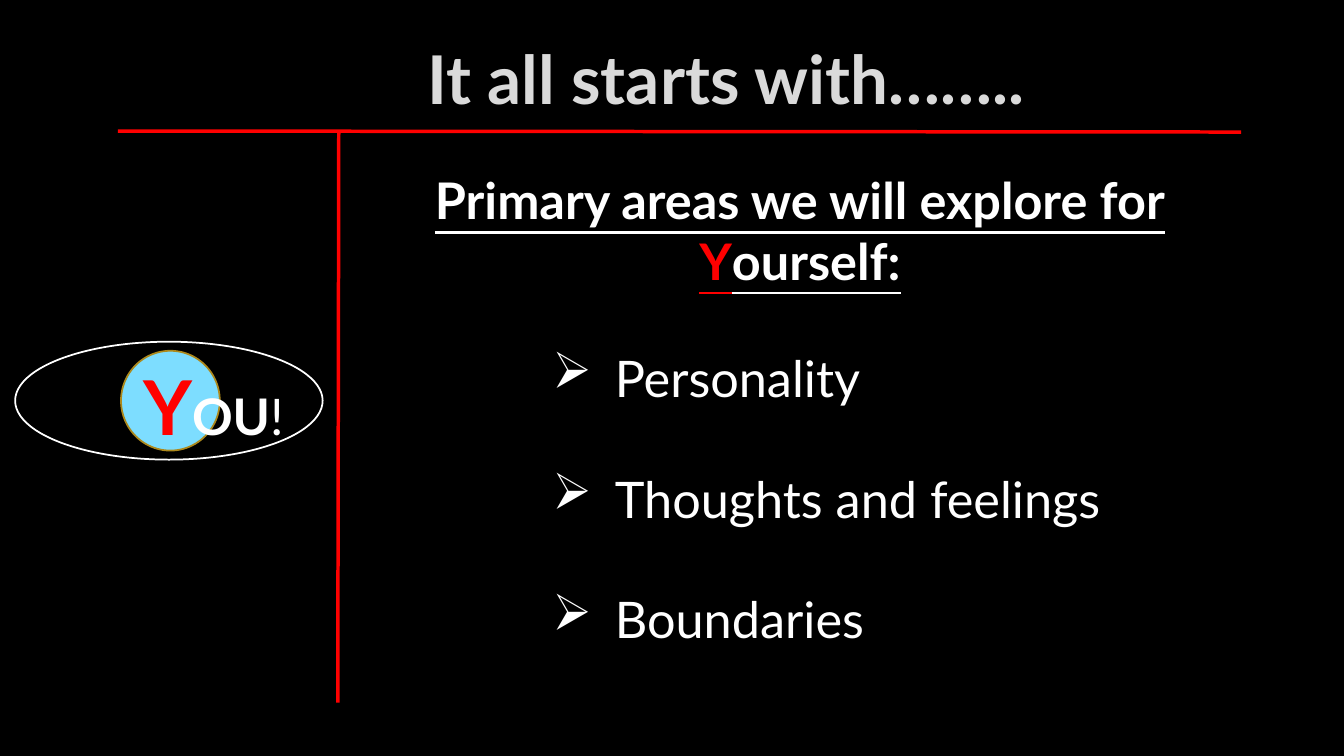
from dataclasses import dataclass

from lxml.etree import SubElement
from pptx import Presentation
from pptx.dml.color import RGBColor as Color
from pptx.enum.shapes import MSO_CONNECTOR as Connector, MSO_SHAPE as Preset
from pptx.enum.text import PP_ALIGN as Align
from pptx.oxml.ns import qn
from pptx.util import Inches, Pt


@dataclass(frozen=True)
class Theme:
    font: str = "Lato"
    black: Color = Color(0, 0, 0)
    white: Color = Color(255, 255, 255)
    silver: Color = Color(0xDA, 0xDA, 0xDA)
    red: Color = Color(255, 0, 0)
    sky: Color = Color(0x7D, 0xDD, 0xFF)
    gold: Color = Color(0xAC, 0x88, 0x1C)
    body: int = 36
    title: int = 48
    initial: int = 54
    bullet_gap: float = 43.2
    rule: float = 2.5
    outline: float = 1.25


THEME = Theme()


@dataclass(frozen=True)
class Area:
    left: float
    top: float
    width: float
    height: float

    def lengths(self) -> list:
        return [Inches(n) for n in (self.left, self.top, self.width, self.height)]


@dataclass(frozen=True)
class Span:
    text: str
    color: Color = THEME.white
    size: int = THEME.body
    bold: bool = False
    underline: bool = False


@dataclass(frozen=True)
class TextBlock:
    area: Area
    lines: list[list[Span]]
    align: Align = Align.LEFT
    bullet: str = ""
    gap: float = 0


@dataclass(frozen=True)
class Oval:
    preset: Preset
    area: Area
    fill: Color
    line: Color


@dataclass(frozen=True)
class Rule:
    start: tuple[float, float]
    end: tuple[float, float]


RULES = [Rule((1.17, 1.3), (12.31, 1.31)), Rule((3.36, 1.3), (3.35, 6.97))]

OVALS = [
    Oval(Preset.OVAL, Area(0.15, 3.39, 3.05, 1.17), THEME.black, THEME.white),
    Oval(Preset.FLOWCHART_CONNECTOR, Area(1.2, 3.48, 0.98, 0.99), THEME.sky, THEME.gold),
]

TEXTS = [
    TextBlock(
        Area(3.22, 0.32, 7.96, 0.99),
        [[Span("It all starts with……..", THEME.silver, THEME.title, bold=True)]],
        Align.CENTER,
    ),
    TextBlock(
        Area(1.32, 3.52, 1.72, 1.01),
        [[Span("Y", THEME.red, THEME.initial, bold=True), Span("OU", bold=True), Span("!")]],
    ),
    TextBlock(
        Area(5.38, 3.39, 5.83, 3.13),
        [[Span(topic)] for topic in ("Personality", "Thoughts and feelings", "Boundaries")],
        bullet="➢",
        gap=THEME.bullet_gap,
    ),
    TextBlock(
        Area(4.15, 1.63, 7.57, 1.31),
        [
            [Span("Primary areas we will explore for", bold=True, underline=True)],
            [
                Span("Y", THEME.red, bold=True, underline=True),
                Span("ourself:", bold=True, underline=True),
            ],
        ],
        Align.CENTER,
    ),
]


def draw_rule(page, rule: Rule) -> None:
    points = [Inches(n) for n in (*rule.start, *rule.end)]
    line = page.shapes.add_connector(Connector.STRAIGHT, *points)
    line.line.color.rgb = THEME.red
    line.line.width = Pt(THEME.rule)
    SubElement(line._element.spPr, qn("a:effectLst"))


def draw_oval(page, oval: Oval) -> None:
    shape = page.shapes.add_shape(oval.preset, *oval.area.lengths())
    shape.shadow.inherit = False
    shape.fill.solid()
    shape.fill.fore_color.rgb = oval.fill
    shape.line.color.rgb = oval.line
    shape.line.width = Pt(THEME.outline)


def add_bullet(para, symbol: str) -> None:
    properties = para._p.get_or_add_pPr()
    indent = Inches(0.62)
    properties.set("marL", str(indent))
    properties.set("indent", str(-indent))
    SubElement(properties, qn("a:buChar"), char=symbol)


def draw_text(page, block: TextBlock) -> None:
    box = page.shapes.add_textbox(*block.area.lengths())
    frame = box.text_frame
    frame.word_wrap = True
    for index, line in enumerate(block.lines):
        para = frame.add_paragraph() if index else frame.paragraphs[0]
        para.alignment = block.align
        if index and block.gap:
            para.space_before = Pt(block.gap)
        if block.bullet:
            add_bullet(para, block.bullet)
        for span in line:
            run = para.add_run()
            run.text = span.text
            run.font.color.rgb = span.color
            formats = {
                "name": THEME.font,
                "size": Pt(span.size),
                "bold": span.bold,
                "underline": span.underline,
            }
            for name, value in formats.items():
                setattr(run.font, name, value)


def main() -> None:
    deck = Presentation()
    deck.slide_width, deck.slide_height = Inches(13.33), Inches(7.5)
    page = deck.slides.add_slide(deck.slide_layouts[6])
    page.background.fill.solid()
    page.background.fill.fore_color.rgb = THEME.black
    for rule in RULES:
        draw_rule(page, rule)
    for oval in OVALS:
        draw_oval(page, oval)
    for block in TEXTS:
        draw_text(page, block)
    deck.save("out.pptx")


if __name__ == "__main__":
    main()
